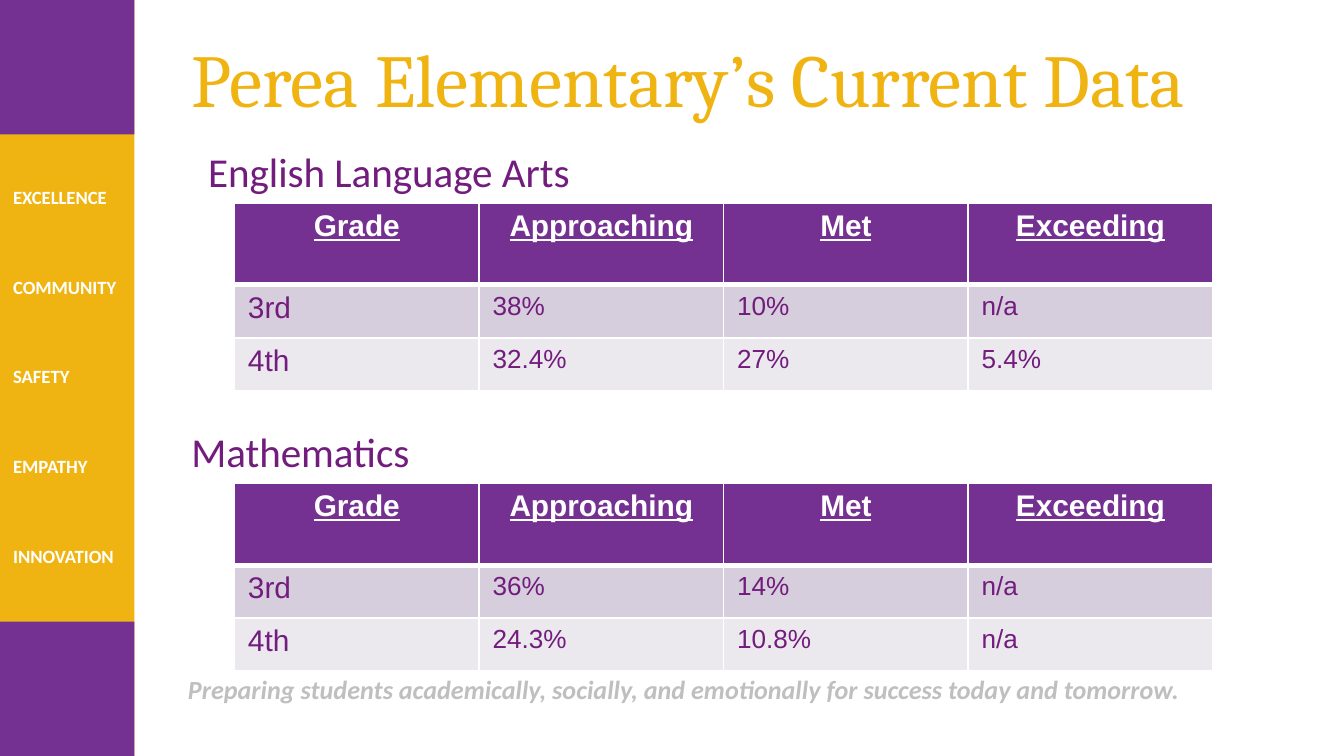
from lxml.etree import SubElement
from pptx import Presentation
from pptx.dml.color import RGBColor
from pptx.enum.shapes import MSO_SHAPE
from pptx.enum.text import MSO_ANCHOR, PP_ALIGN
from pptx.oxml.ns import qn
from pptx.util import Pt

SCALE = 4572
PURPLE = RGBColor(0x74, 0x31, 0x91)
PLUM = RGBColor(0x72, 0x1C, 0x7D)
GOLD = RGBColor(0xF0, 0xB4, 0x12)
WHITE = RGBColor(0xFF, 0xFF, 0xFF)
GREY = RGBColor(0xBF, 0xBF, 0xBF)
LILAC = RGBColor(0xD6, 0xCE, 0xDC)
PALE = RGBColor(0xEB, 0xE8, 0xEE)

VALUE_FORMAT = {"name": "Calibri", "size": Pt(10), "bold": True, "color": WHITE}
MOTTO_FORMAT = {"name": "Calibri", "size": Pt(14), "bold": True, "italic": True, "color": GREY}
TITLE_FORMAT = {"name": "Cambria", "size": Pt(40), "color": GOLD}
SUBJECT_FORMAT = {"name": "Calibri", "size": Pt(22), "color": PLUM}
HEADER_FORMAT = {"name": "Arial", "size": Pt(16), "bold": True, "underline": True, "color": WHITE}
GRADE_FORMAT = {"name": "Arial", "size": Pt(16), "bold": False, "color": PLUM}
SCORE_FORMAT = {**GRADE_FORMAT, "size": Pt(14)}

VALUES = ["EXCELLENCE", "COMMUNITY", "SAFETY", "EMPATHY", "INNOVATION"]
HEADER = ["Grade", "Approaching", "Met", "Exceeding"]
SUBJECTS = [
    ("English Language Arts", 25, [["3rd", "38%", "10%", "n/a"], ["4th", "32.4%", "27%", "5.4%"]]),
    ("Mathematics", 0, [["3rd", "36%", "14%", "n/a"], ["4th", "24.3%", "10.8%", "n/a"]]),
]
ROW_HEIGHTS = [122, 79, 79]
ROW_FILLS = [PURPLE, LILAC, PALE]


def px(*lengths):
    return [length * SCALE for length in lengths]


def format_font(font, values):
    for name, value in values.items():
        if name == "color":
            font.color.rgb = value
        else:
            setattr(font, name, value)


def add_text(slide, box, lines, values, gap=0, anchor=MSO_ANCHOR.TOP):
    frame = slide.shapes.add_textbox(*px(*box)).text_frame
    frame.word_wrap = True
    frame.vertical_anchor = anchor
    for index, line in enumerate(lines):
        paragraph = frame.add_paragraph() if index else frame.paragraphs[0]
        if index:
            paragraph.space_before = Pt(gap)
        run = paragraph.add_run()
        run.text = line
        format_font(run.font, values)


def add_block(slide, box, color):
    shape = slide.shapes.add_shape(MSO_SHAPE.RECTANGLE, *px(*box))
    shape.shadow.inherit = False
    shape.fill.solid()
    shape.fill.fore_color.rgb = color
    shape.line.fill.background()


def add_sidebar(slide, left, top, width, height):
    add_block(slide, (left, top, width, height), GOLD)
    for block_top in (top, top + height - width):
        add_block(slide, (left, block_top, width, width), PURPLE)
    add_text(slide, (left, top + 267, width, 592), VALUES, VALUE_FORMAT, gap=36)


def add_borders(cell, widths):
    properties = cell._tc.get_or_add_tcPr()
    for index, (side, width) in enumerate(widths.items()):
        line = SubElement(properties, qn(f"a:ln{side}"), w=str(Pt(width)))
        fill = SubElement(line, qn("a:solidFill"))
        SubElement(fill, qn("a:srgbClr"), val=str(WHITE))
        properties.insert(index, line)


def add_score_table(slide, left, top, width, rows):
    box = px(left, top, width, sum(ROW_HEIGHTS))
    table = slide.shapes.add_table(len(rows), len(HEADER), *box).table
    for column in table.columns:
        column.width = width // len(HEADER) * SCALE
    for row_index, texts in enumerate(rows):
        table.rows[row_index].height = ROW_HEIGHTS[row_index] * SCALE
        for column_index, text in enumerate(texts):
            cell = table.cell(row_index, column_index)
            cell.fill.solid()
            cell.fill.fore_color.rgb = ROW_FILLS[row_index]
            add_borders(cell, {"L": 1, "R": 1, "T": 3 if row_index == 1 else 1,
                               "B": 3 if row_index == 0 else 1})
            paragraph = cell.text_frame.paragraphs[0]
            run = paragraph.add_run()
            run.text = text
            if row_index == 0:
                paragraph.alignment = PP_ALIGN.CENTER
                format_font(run.font, HEADER_FORMAT)
            else:
                format_font(run.font, SCORE_FORMAT if column_index else GRADE_FORMAT)


def add_subject(slide, left, top, width, subject):
    name, indent, scores = subject
    add_text(slide, (left + indent, top, width - indent, 94), [name], SUBJECT_FORMAT)
    add_score_table(slide, left + 84, top + 94, 1456, [HEADER, *scores])


def main():
    presentation = Presentation()
    presentation.slide_width, presentation.slide_height = px(2000, 1125)
    slide = presentation.slides.add_slide(presentation.slide_layouts[6])
    add_sidebar(slide, 0, 0, 200, 1125)
    motto = "Preparing students academically, socially, and emotionally for success today and tomorrow."
    add_text(slide, (260, 993, 1626, 68), [motto], MOTTO_FORMAT)
    add_text(slide, (265, 46, 1626, 140), ["Perea Elementary’s Current Data"],
             TITLE_FORMAT, anchor=MSO_ANCHOR.MIDDLE)
    for index, subject in enumerate(SUBJECTS):
        add_subject(slide, 265, 208 + 417 * index, 1626, subject)
    presentation.save("out.pptx")


if __name__ == "__main__":
    main()
